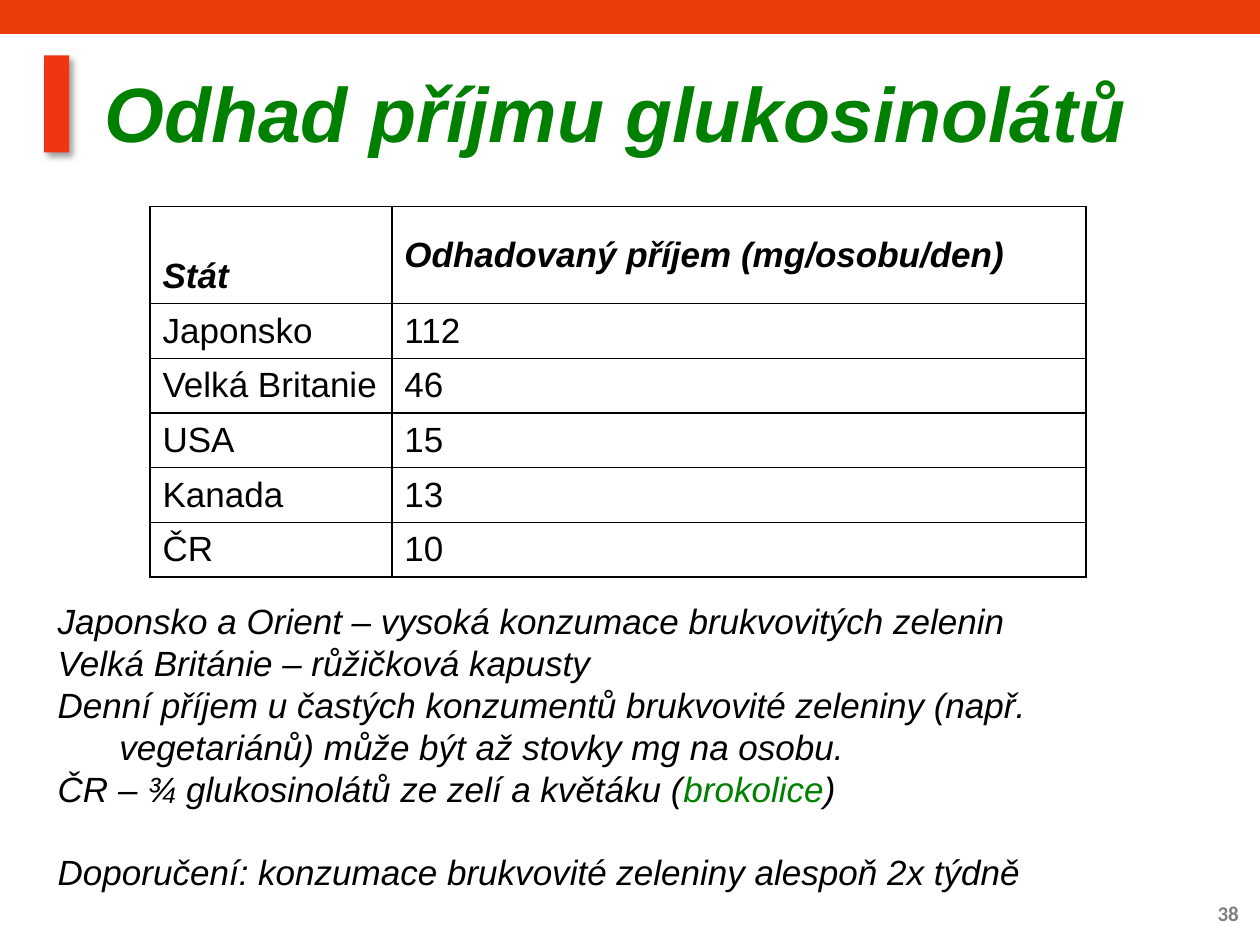
import pptx
import pptx.dml.color
import pptx.enum.shapes
import pptx.enum.text
import pptx.oxml
import pptx.oxml.ns
import pptx.util

THEME = {
    "font": "Arial", "number_font": "Calibri",
    "title_size": 44, "body_size": 20, "number_size": 12,
    "bar": "E93C09", "marker": "EE3712", "accent": "008000",
    "text": "000000", "muted": "808080", "border": "000000",
}
ANCHOR = pptx.enum.text.MSO_ANCHOR
NAMESPACE = pptx.oxml.ns.nsdecls("a")

deck = pptx.Presentation()
deck.slide_width = pptx.util.Inches(10)
deck.slide_height = pptx.util.Inches(7.5)
page = deck.slides.add_slide(deck.slide_layouts[6])

# Grid of 100 columns by 75 rows
COLUMN = deck.slide_width // 100
ROW = deck.slide_height // 75


def place(left, top, width, height):
    return [round(length) for length in
            (left * COLUMN, top * ROW, width * COLUMN, height * ROW)]


def set_font(target, size, color, name=THEME["font"], bold=False, italic=False):
    font = target.font
    font.name, font.size = name, pptx.util.Pt(size)
    font.bold, font.italic = bold, italic
    font.color.rgb = pptx.dml.color.RGBColor.from_string(color)


# Top bar and title marker
for area, color in [((0, 0, 100, 2.7), "bar"), ((3.5, 4.4, 2, 7.7), "marker")]:
    block = page.shapes.add_shape(
        pptx.enum.shapes.MSO_SHAPE.RECTANGLE, *place(*area))
    block.shadow.inherit = False
    block.fill.solid()
    block.fill.fore_color.rgb = pptx.dml.color.RGBColor.from_string(THEME[color])
    block.line.fill.background()

# Soft shadow under the marker, the last block drawn
effects = block._element.spPr.find(pptx.oxml.ns.qn("a:effectLst"))
effects.append(pptx.oxml.parse_xml(
    f'<a:outerShdw {NAMESPACE} blurRad="50800" dist="38100" dir="2700000" '
    'algn="tl" rotWithShape="0"><a:srgbClr val="000000">'
    '<a:alpha val="40000"/></a:srgbClr></a:outerShdw>'))

# Title and slide number
labels = [
    ("Odhad příjmu glukosinolátů", (7.3, 4.4, 90.5, 9.8),
     pptx.enum.text.PP_ALIGN.LEFT, 0.9,
     dict(size=THEME["title_size"], color=THEME["accent"], bold=True, italic=True)),
    ("38", (92.5, 70.5, 6.8, 4), pptx.enum.text.PP_ALIGN.RIGHT, 1.0,
     dict(size=THEME["number_size"], color=THEME["muted"],
          name=THEME["number_font"], bold=True)),
]
for text, area, alignment, spacing, style in labels:
    frame = page.shapes.add_textbox(*place(*area)).text_frame
    frame.word_wrap = True
    frame.vertical_anchor = ANCHOR.MIDDLE
    para = frame.paragraphs[0]
    para.text = text
    para.alignment, para.line_spacing = alignment, spacing
    set_font(para, **style)

# Intake table
intake = [
    ("Stát", "Odhadovaný příjem (mg/osobu/den)"),
    ("Japonsko", "112"),
    ("Velká Britanie", "46"),
    ("USA", "15"),
    ("Kanada", "13"),
    ("ČR", "10"),
]
table = page.shapes.add_table(
    len(intake), 2, *place(11.9, 16.4, 74.3, 29.3)).table
table.first_row = table.horz_banding = False
for column, width in zip(table.columns, (19.2, 55.1)):
    column.width = round(width * COLUMN)
for row_index, values in enumerate(intake):
    header = row_index == 0
    table.rows[row_index].height = round((7.7 if header else 4.33) * ROW)
    for column_index, value in enumerate(values):
        cell = table.cell(row_index, column_index)
        cell.text = value
        cell.vertical_anchor = ANCHOR.MIDDLE
        set_font(cell.text_frame.paragraphs[0], THEME["body_size"],
                 THEME["text"], bold=header, italic=header)
        properties = cell._tc.get_or_add_tcPr()
        for side in ("lnL", "lnR", "lnT", "lnB"):
            properties.append(pptx.oxml.parse_xml(
                f'<a:{side} {NAMESPACE} w="12700"><a:solidFill>'
                f'<a:srgbClr val="{THEME["border"]}"/></a:solidFill></a:{side}>'))
        cell.fill.background()
state_heading = table.cell(0, 0)
state_heading.vertical_anchor = ANCHOR.BOTTOM
state_heading.margin_bottom = pptx.util.Inches(0.06)

# Notes with hanging indents; each note is a list of (text, color) spans
notes = [
    [("Japonsko a Orient – vysoká konzumace brukvovitých zelenin", "text")],
    [("Velká Británie – růžičková kapusty", "text")],
    [("Denní příjem u častých konzumentů brukvovité zeleniny "
      "(např. vegetariánů) může být až stovky mg na osobu.", "text")],
    [("ČR – ¾ glukosinolátů ze zelí a květáku (", "text"),
     ("brokolice", "accent"), (")", "text")],
    [("Doporučení: konzumace brukvovité zeleniny alespoň 2x týdně", "text")],
]
frame = page.shapes.add_textbox(*place(3.6, 46.9, 92.4, 24.6)).text_frame
frame.word_wrap = True
frame.vertical_anchor = ANCHOR.MIDDLE
hanging = round(4.9 * COLUMN)
for index, spans in enumerate(notes):
    para = frame.paragraphs[0] if index == 0 else frame.add_paragraph()
    indents = para._p.get_or_add_pPr()
    indents.set("marL", str(hanging))
    indents.set("indent", str(-hanging))
    set_font(para, THEME["body_size"], THEME["text"], italic=True)
    for text, color in spans:
        span = para.add_run()
        span.text = text
        if color != "text":
            span.font.color.rgb = pptx.dml.color.RGBColor.from_string(THEME[color])
# The recommendation stands one line apart
para.space_before = pptx.util.Pt(23)

deck.save("out.pptx")
